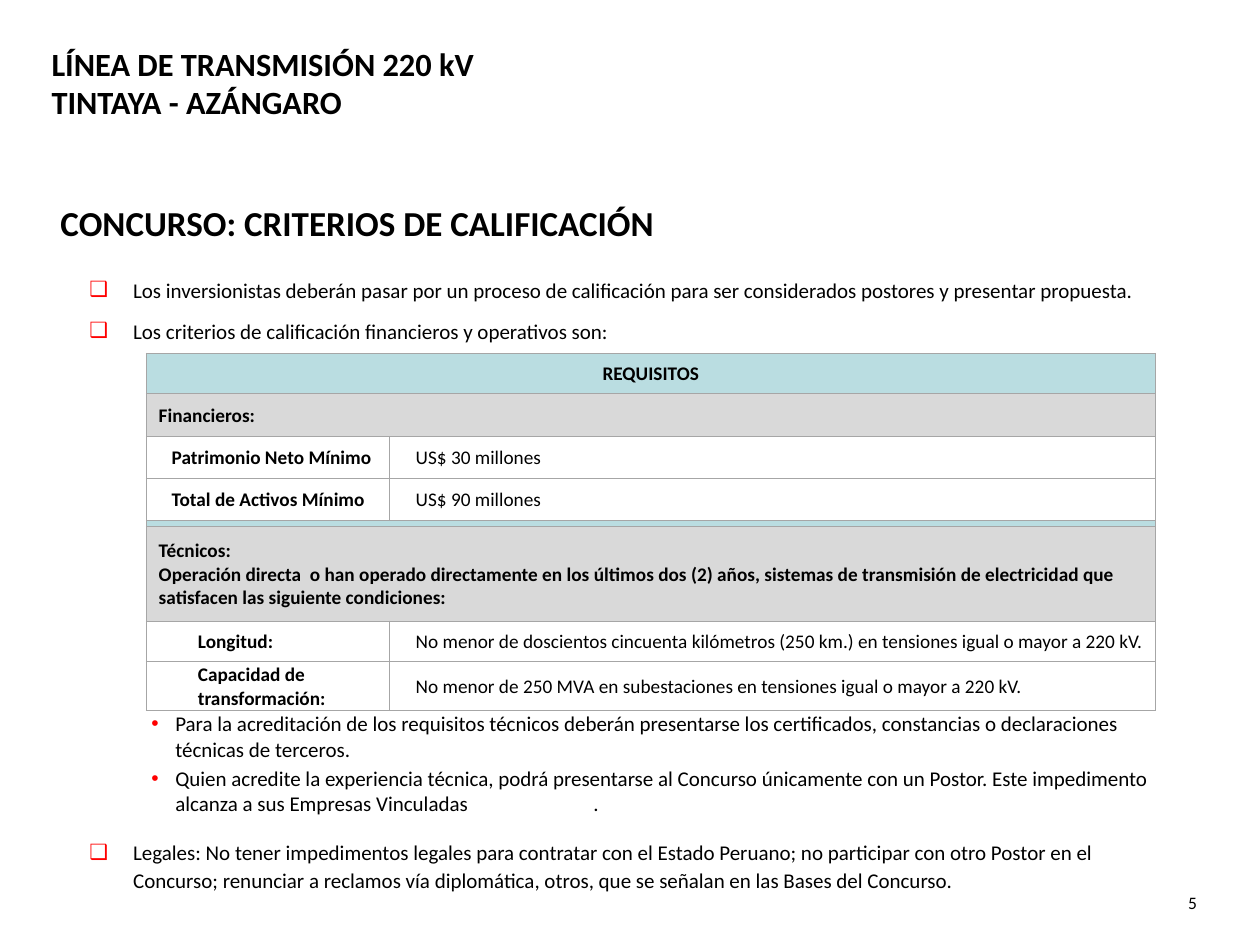
from dataclasses import dataclass
from typing import Optional

from lxml import etree
from pptx import Presentation
from pptx import util as u
from pptx.dml.color import RGBColor
from pptx.enum import text
from pptx.oxml import ns


@dataclass(frozen=True)
class Theme:
    font: str = "Calibri"
    ink: str = "000000"
    bullet: str = "FF0000"
    header: str = "BADDE1"
    section: str = "D9D9D9"
    border: str = "A6A6A6"
    title_size: float = 18.5
    heading_size: float = 20
    body_size: float = 12
    table_size: float = 11
    number_size: float = 10


@dataclass(frozen=True)
class Box:
    left: float
    top: float
    width: float
    height: float

    def lengths(self) -> list:
        return [u.Cm(v) for v in (self.left, self.top, self.width, self.height)]


@dataclass(frozen=True)
class Bullet:
    words: str
    mark: str
    margin: float
    hanging: float
    before: float = 0
    after: float = 0
    spacing: float = 1.0
    tab: Optional[float] = None


@dataclass(frozen=True)
class Row:
    height: float
    label: str
    value: Optional[str] = None
    fill: Optional[str] = None
    inset: float = 0.25
    centred: bool = False


THEME = Theme()
TITLE = Box(0.53, 0.56, 16.66, 2.21)
HEADING = Box(0.97, 3.73, 14.17, 1.52)
BODY = Box(1.55, 5.46, 22.15, 12.65)
NUMBER = Box(23.01, 17.86, 1.37, 0.81)
TABLE_LEFT, TABLE_TOP = 2.95, 7.12
COLUMNS = (4.9, 15.44)
CELL_PAD, LABEL_INSET, NESTED_INSET, VALUE_INSET = 0.02, 0.51, 1.04, 0.53

BULLETS = (
    Bullet("Los inversionistas deberán pasar por un proceso de calificación para ser "
           "considerados postores y presentar propuesta.", "❑", 0.88, 0.88, after=9),
    Bullet("Los criterios de calificación financieros y operativos son:",
           "❑", 0.88, 0.88, after=6),
    Bullet("Para la acreditación de los requisitos técnicos deberán presentarse los "
           "certificados, constancias o declaraciones técnicas de terceros.",
           "•", 1.73, 0.48, before=204),
    Bullet("Quien acredite la experiencia técnica, podrá presentarse al Concurso únicamente "
           "con un Postor. Este impedimento alcanza a sus Empresas Vinculadas\t.",
           "•", 1.73, 0.48, before=2.4, tab=10.16),
    Bullet("Legales: No tener impedimentos legales para contratar con el Estado Peruano; no "
           "participar con otro Postor en el Concurso; renunciar a reclamos vía diplomática, "
           "otros, que se señalan en las Bases del Concurso.",
           "❑", 0.88, 0.88, before=12, after=9, spacing=1.1),
)

ROWS = (
    Row(0.81, "REQUISITOS", fill=THEME.header, inset=CELL_PAD, centred=True),
    Row(0.87, "Financieros:", fill=THEME.section),
    Row(0.85, "Patrimonio Neto Mínimo", "US$ 30 millones", inset=LABEL_INSET),
    Row(0.85, "Total de Activos Mínimo", "US$ 90 millones", inset=LABEL_INSET),
    Row(0.12, "", fill=THEME.header),
    Row(1.9, "Técnicos:\nOperación directa  o han operado directamente en los últimos dos (2) "
        "años, sistemas de transmisión de electricidad que satisfacen las siguiente "
        "condiciones:", fill=THEME.section),
    Row(0.82, "Longitud:", "No menor de doscientos cincuenta kilómetros (250 km.) en tensiones "
        "igual o mayor a 220 kV.", inset=NESTED_INSET),
    Row(0.95, "Capacidad de transformación:", "No menor de 250 MVA en subestaciones en "
        "tensiones igual o mayor a 220 kV.", inset=NESTED_INSET),
)


def add_xml(parent, tag: str, **attributes):
    return etree.SubElement(parent, ns.qn(tag), {k: str(v) for k, v in attributes.items()})


def format_runs(paragraph, size: float, bold: bool = False) -> None:
    for run in paragraph.runs:
        run.font.name = THEME.font
        run.font.size = u.Pt(size)
        run.font.bold = bold
        run.font.color.rgb = RGBColor.from_string(THEME.ink)


def write(frame, words: str, size: float, bold: bool = False,
          align=text.PP_ALIGN.LEFT, anchor=text.MSO_ANCHOR.TOP) -> None:
    frame.text = words
    frame.word_wrap = True
    frame.auto_size = text.MSO_AUTO_SIZE.NONE
    frame.vertical_anchor = anchor
    for paragraph in frame.paragraphs:
        paragraph.alignment = align
        format_runs(paragraph, size, bold)


def place(shape, box: Box) -> None:
    shape.left, shape.top, shape.width, shape.height = box.lengths()


def format_bullet(paragraph, bullet: Bullet) -> None:
    properties = paragraph._p.get_or_add_pPr()
    properties.set("marL", str(u.Cm(bullet.margin)))
    properties.set("indent", str(-u.Cm(bullet.hanging)))
    add_xml(add_xml(properties, "a:buClr"), "a:srgbClr", val=THEME.bullet)
    add_xml(properties, "a:buChar", char=bullet.mark)
    if bullet.tab:
        add_xml(add_xml(properties, "a:tabLst"), "a:tab", pos=u.Cm(bullet.tab), algn="l")
    paragraph.space_before = u.Pt(bullet.before)
    paragraph.space_after = u.Pt(bullet.after)
    paragraph.line_spacing = bullet.spacing


def fill_cell(cell, words: str, bold: bool, inset: float, fill: Optional[str],
              centred: bool = False) -> None:
    cell.margin_left = u.Cm(inset)
    cell.margin_right = u.Cm(CELL_PAD)
    cell.margin_top = u.Cm(CELL_PAD if words else 0)
    cell.margin_bottom = 0
    cell.vertical_anchor = text.MSO_ANCHOR.MIDDLE
    cell.text_frame.text = words
    for paragraph in cell.text_frame.paragraphs:
        paragraph.alignment = text.PP_ALIGN.CENTER if centred else text.PP_ALIGN.LEFT
        format_runs(paragraph, THEME.table_size, bold)
        if not words:
            add_xml(paragraph._p, "a:endParaRPr", sz=100)
    properties = cell._tc.get_or_add_tcPr()
    for side in ("a:lnL", "a:lnR", "a:lnT", "a:lnB"):
        line = add_xml(properties, side, w=u.Pt(0.5))
        add_xml(add_xml(line, "a:solidFill"), "a:srgbClr", val=THEME.border)
    if fill:
        cell.fill.solid()
        cell.fill.fore_color.rgb = RGBColor.from_string(fill)
    else:
        cell.fill.background()


def add_requirements(slide) -> None:
    box = Box(TABLE_LEFT, TABLE_TOP, sum(COLUMNS), sum(row.height for row in ROWS))
    requirements = slide.shapes.add_table(len(ROWS), len(COLUMNS), *box.lengths()).table
    requirements.first_row = requirements.horz_banding = False
    for column, width in zip(requirements.columns, COLUMNS):
        column.width = u.Cm(width)
    for index, row in enumerate(ROWS):
        requirements.rows[index].height = u.Cm(row.height)
        label, value = requirements.cell(index, 0), requirements.cell(index, 1)
        fill_cell(label, row.label, True, row.inset, row.fill, row.centred)
        fill_cell(value, row.value or "", False, VALUE_INSET, row.fill)
        if row.value is None:
            label.merge(value)


def main() -> None:
    deck = Presentation()
    deck.slide_width, deck.slide_height = u.Cm(25.4), u.Cm(19.05)
    slide = deck.slides.add_slide(deck.slide_layouts[1])
    title, criteria = slide.shapes.title, slide.placeholders[1]

    place(title, TITLE)
    write(title.text_frame, "LÍNEA DE TRANSMISIÓN 220 kV\nTINTAYA - AZÁNGARO",
          THEME.title_size, True, anchor=text.MSO_ANCHOR.MIDDLE)
    title.text_frame.margin_left = u.Cm(0.51)

    place(criteria, BODY)
    write(criteria.text_frame, "\n".join(b.words for b in BULLETS), THEME.body_size)
    for paragraph, bullet in zip(criteria.text_frame.paragraphs, BULLETS):
        format_bullet(paragraph, bullet)

    heading = slide.shapes.add_textbox(*HEADING.lengths())
    write(heading.text_frame, "CONCURSO: CRITERIOS DE CALIFICACIÓN",
          THEME.heading_size, True, anchor=text.MSO_ANCHOR.MIDDLE)
    number = slide.shapes.add_textbox(*NUMBER.lengths())
    write(number.text_frame, "5", THEME.number_size, align=text.PP_ALIGN.RIGHT)
    add_requirements(slide)
    deck.save("out.pptx")


if __name__ == "__main__":
    main()
